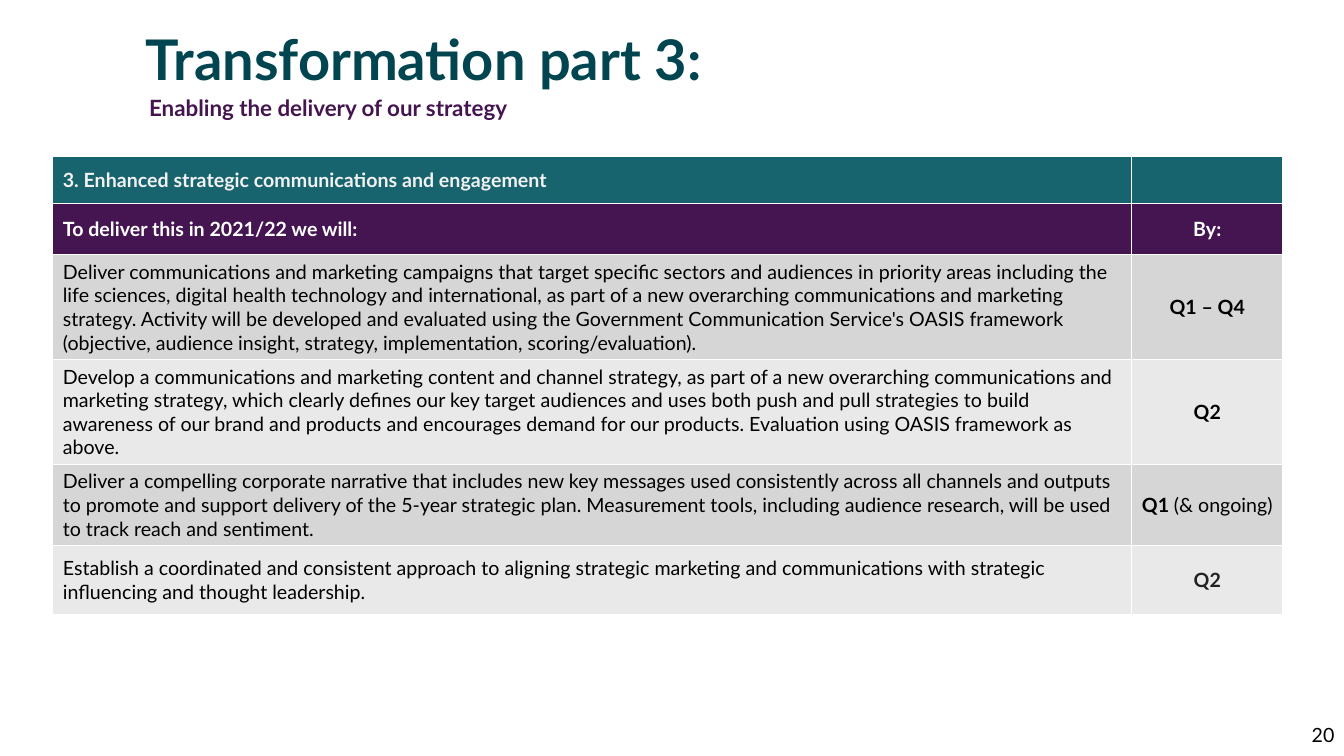
from dataclasses import dataclass

from lxml.etree import SubElement
from pptx import Presentation
from pptx.dml.color import RGBColor
from pptx.enum.text import MSO_ANCHOR, PP_ALIGN
from pptx.oxml.ns import qn
from pptx.util import Cm, Pt


@dataclass(frozen=True)
class Theme:
    """Font, type sizes and colours of the slide."""
    font: str = "Lato"
    title_size: int = 40
    subtitle_size: int = 16
    body_size: int = 14
    title: str = "004550"
    subtitle: str = "451550"
    section_fill: str = "18646E"
    section_text: str = "F2F2F2"
    header_fill: str = "451551"
    white: str = "FFFFFF"
    black: str = "000000"
    last_quarter: str = "222222"
    bands: tuple = ("D6D6D6", "E9E9E9")


THEME = Theme()
COLUMN_WIDTHS = (27.19, 3.81)
HEADER_HEIGHTS = (1.17, 1.3)
ACTIONS = [
    (2.64, "Deliver communications and marketing campaigns that target specific sectors and audiences in "
     "priority areas including the life sciences, digital health technology and international, as part of a "
     "new overarching communications and marketing strategy. Activity will be developed and evaluated using "
     "the Government Communication Service's OASIS framework (objective, audience insight, strategy, "
     "implementation, scoring/evaluation).", "Q1 – Q4", ""),
    (2.64, "Develop a communications and marketing content and channel strategy, as part of a new overarching "
     "communications and marketing strategy, which clearly defines our key target audiences and uses both "
     "push and pull strategies to build awareness of our brand and products and encourages demand for our "
     "products. Evaluation using OASIS framework as above.", "Q2", ""),
    (2.05, "Deliver a compelling corporate narrative that includes new key messages used consistently across "
     "all channels and outputs to promote and support delivery of the 5-year strategic plan. Measurement "
     "tools, including audience research, will be used to track reach and sentiment.", "Q1 ", "(& ongoing)"),
    (1.73, "Establish a coordinated and consistent approach to aligning strategic marketing and communications "
     "with strategic influencing and thought leadership.", "Q2", ""),
]


def style_paragraph(paragraph, size, color, bold=None, align=PP_ALIGN.LEFT):
    """Set the font and alignment of a paragraph."""
    paragraph.alignment = align
    paragraph.font.name = THEME.font
    paragraph.font.size = Pt(size)
    paragraph.font.bold = bold
    paragraph.font.color.rgb = RGBColor.from_string(color)


def add_text(slide, box, text, size, color, bold=False, align=PP_ALIGN.LEFT, anchor=MSO_ANCHOR.TOP):
    """Add a one-paragraph text box and return its paragraph."""
    frame = slide.shapes.add_textbox(*map(Cm, box)).text_frame
    frame.word_wrap = True
    frame.vertical_anchor = anchor
    paragraph = frame.paragraphs[0]
    paragraph.text = text
    style_paragraph(paragraph, size, color, bold, align)
    return paragraph


def add_borders(cell):
    """Draw a thin white line on every side of a cell."""
    properties = cell._tc.get_or_add_tcPr()
    for side in ("a:lnL", "a:lnR", "a:lnT", "a:lnB"):
        line = SubElement(properties, qn(side), w=str(Pt(1)))
        fill = SubElement(line, qn("a:solidFill"))
        SubElement(fill, qn("a:srgbClr"), val=THEME.white)


def fill_cell(cell, text, fill, color, bold=None, align=PP_ALIGN.LEFT):
    """Fill a table cell with colour and text, and return its paragraph."""
    add_borders(cell)
    cell.fill.solid()
    cell.fill.fore_color.rgb = RGBColor.from_string(fill)
    cell.vertical_anchor = MSO_ANCHOR.MIDDLE
    paragraph = cell.text_frame.paragraphs[0]
    if text:
        paragraph.add_run().text = text
    style_paragraph(paragraph, THEME.body_size, color, bold, align)
    return paragraph


def fill_deadline(cell, quarter, remark, fill, color):
    """Write a bold quarter, followed by a plain remark if there is one."""
    paragraph = fill_cell(cell, quarter, fill, color, align=PP_ALIGN.CENTER)
    paragraph.runs[0].font.bold = True
    if remark:
        run = paragraph.add_run()
        run.text = remark
        run.font.bold = False


def add_action_table(slide):
    """Add the table of actions and their deadlines."""
    heights = HEADER_HEIGHTS + tuple(action[0] for action in ACTIONS)
    table = slide.shapes.add_table(
        len(heights), len(COLUMN_WIDTHS), Cm(1.33), Cm(3.95),
        Cm(sum(COLUMN_WIDTHS)), Cm(sum(heights))).table
    for column, width in zip(table.columns, COLUMN_WIDTHS):
        column.width = Cm(width)
    for row, height in zip(table.rows, heights):
        row.height = Cm(height)

    fill_cell(table.cell(0, 0), "3. Enhanced strategic communications and engagement",
              THEME.section_fill, THEME.section_text, True)
    fill_cell(table.cell(0, 1), "", THEME.section_fill, THEME.section_text)
    fill_cell(table.cell(1, 0), "To deliver this in 2021/22 we will:", THEME.header_fill, THEME.white, True)
    fill_cell(table.cell(1, 1), "By:", THEME.header_fill, THEME.white, True, PP_ALIGN.CENTER)
    for index, (_, action, quarter, remark) in enumerate(ACTIONS):
        row = index + len(HEADER_HEIGHTS)
        band = THEME.bands[index % 2]
        is_last = index == len(ACTIONS) - 1
        fill_cell(table.cell(row, 0), action, band, THEME.black, False)
        fill_deadline(table.cell(row, 1), quarter, remark, band,
                      THEME.last_quarter if is_last else THEME.black)


def main():
    """Build the slide and save it."""
    presentation = Presentation()
    presentation.slide_width = Cm(33.87)
    presentation.slide_height = Cm(19.05)
    slide = presentation.slides.add_slide(presentation.slide_layouts[6])
    title = add_text(slide, (3.43, 0.69, 15.54, 1.75), "Transformation part 3:",
                     THEME.title_size, THEME.title, True)
    title.line_spacing = 0.9
    add_text(slide, (3.51, 2.24, 17.07, 1.04), "Enabling the delivery of our strategy",
             THEME.subtitle_size, THEME.subtitle, True)
    add_action_table(slide)
    add_text(slide, (26.26, 18.01, 7.62, 1.02), "20", THEME.body_size, THEME.black,
             align=PP_ALIGN.RIGHT, anchor=MSO_ANCHOR.MIDDLE)
    presentation.save("out.pptx")


if __name__ == "__main__":
    main()
